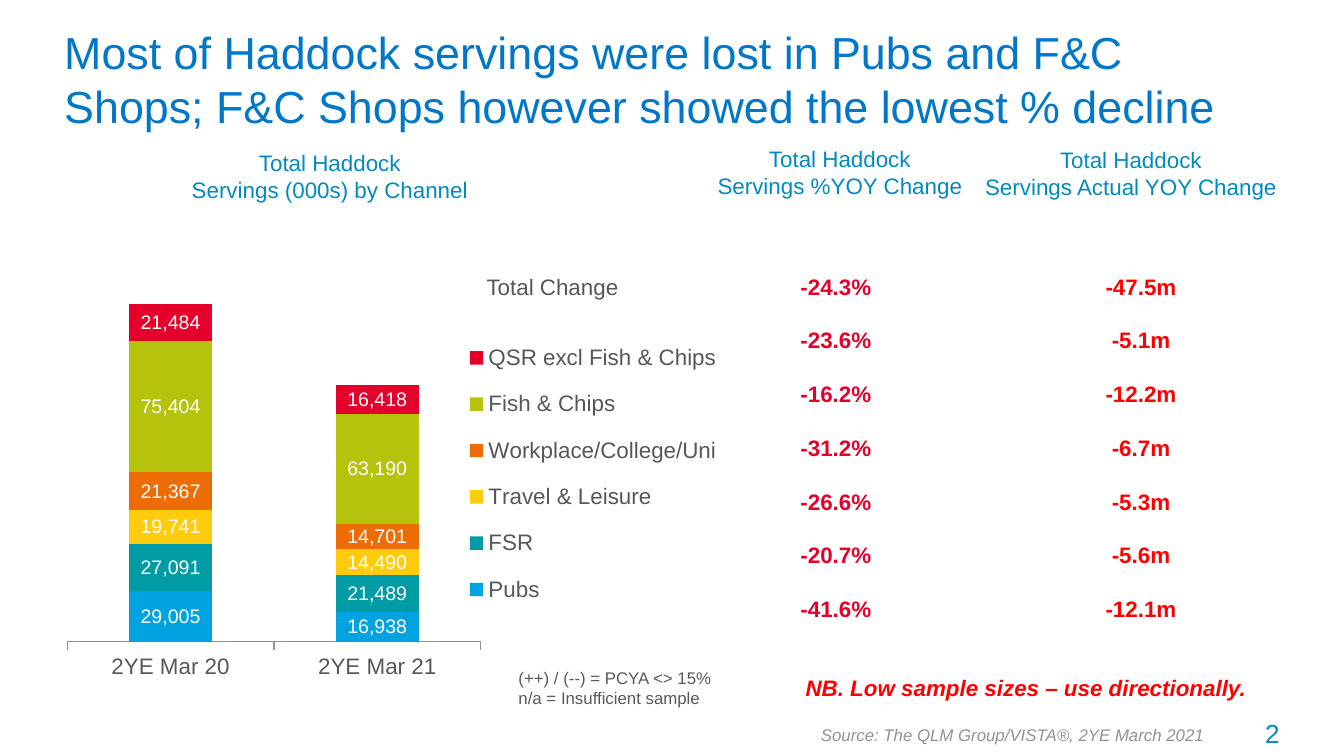
from lxml import etree
from pptx import Presentation
from pptx import util as u
from pptx.chart import data as cd
from pptx.dml.color import RGBColor
from pptx.enum import chart as ch, text as tx
from pptx.oxml.ns import qn

PX = 9144  # EMU in one px, 100 px to the inch
FONT = "Arial"
BLUE, GREY, RED, CRIMSON = "008AC0", "54585A", "FF0000", "E4002B"
ALIGN = {"l": tx.PP_ALIGN.LEFT, "c": tx.PP_ALIGN.CENTER, "r": tx.PP_ALIGN.RIGHT}

YEARS = ["2YE Mar 20", "2YE Mar 21"]
CHANNELS = [
    ("Pubs", (29005, 16938), "00A3E0"),
    ("FSR", (27091, 21489), "009CA6"),
    ("Travel & Leisure", (19741, 14490), "FECC0C"),
    ("Workplace/College/Uni", (21367, 14701), "ED6C05"),
    ("Fish & Chips", (75404, 63190), "B6C30C"),
    ("QSR excl Fish & Chips", (21484, 16418), CRIMSON),
]
PERCENTS = ["-24.3%", "-23.6%", "-16.2%", "-31.2%", "-26.6%", "-20.7%", "-41.6%"]
ACTUALS = ["-47.5m", "-5.1m", "-12.2m", "-6.7m", "-5.3m", "-5.6m", "-12.1m"]


def rgb(code):
    return RGBColor.from_string(code)


def px(*vals):
    return [u.Emu(v * PX) for v in vals]


def style(font, size, color):
    font.name, font.size = FONT, u.Pt(size)
    font.color.rgb = rgb(color)


def write(slide, lines, at, size=12, color=GREY, align="l", bold=False,
          italic=False, wrap=True, middle=False, inset=10, gap=0):
    """Add a text box with one paragraph per line, gap points apart."""
    frame = slide.shapes.add_textbox(*px(*at)).text_frame
    frame.word_wrap = wrap
    frame.margin_left = px(inset)[0]
    if middle:
        frame.vertical_anchor = tx.MSO_ANCHOR.MIDDLE
    for i, line in enumerate(lines):
        para = frame.add_paragraph() if i else frame.paragraphs[0]
        para.alignment = ALIGN[align]
        para.space_before = u.Pt(gap if i else 0)
        run = para.add_run()
        run.text = line
        style(run.font, size, color)
        run.font.bold, run.font.italic = bold, italic


def place(parent, index, box, inner=False):
    """Set a manual layout, in percent of the chart, on a chart part."""
    for old in parent.findall(qn("c:layout")):
        parent.remove(old)
    layout = etree.Element(qn("c:layout"))
    manual = etree.SubElement(layout, qn("c:manualLayout"))
    rules = [("layoutTarget", "inner")] if inner else []
    rules += [("xMode", "edge"), ("yMode", "edge")]
    rules += [(side, val / 100) for side, val in zip("xywh", box)]
    for tag, val in rules:
        etree.SubElement(manual, qn("c:" + tag), val=str(val))
    parent.insert(index, layout)


def draw_chart(slide, at):
    data = cd.CategoryChartData(number_format="#,##0")
    data.categories = YEARS
    for name, vals, _ in CHANNELS:
        data.add_series(name, vals)
    kind = ch.XL_CHART_TYPE.COLUMN_STACKED
    chart = slide.shapes.add_chart(kind, *px(*at), data).chart
    style(chart.font, 12, GREY)
    chart.has_title = False

    plot = chart.plots[0]
    plot.gap_width, plot.overlap = 150, 100
    plot.vary_by_categories = False
    for series, (_, _, color) in zip(plot.series, CHANNELS):
        series.format.fill.solid()
        series.format.fill.fore_color.rgb = rgb(color)
        labels = series.data_labels
        labels.show_value = True
        labels.number_format, labels.number_format_is_linked = "#,##0", False
        style(labels.font, 10.5, "FFFFFF")

    values = chart.value_axis
    values.visible = values.has_major_gridlines = False
    values.minimum_scale, values.maximum_scale = 0, 250000
    years = chart.category_axis
    years.major_tick_mark = ch.XL_TICK_MARK.OUTSIDE
    years.format.line.color.rgb = rgb("8E9396")

    chart.has_legend = True
    legend = chart.legend
    legend.position = ch.XL_LEGEND_POSITION.RIGHT
    legend.include_in_layout = False
    style(legend.font, 12, GREY)
    place(legend._element, 1, (56.8, 24.2, 37, 53.3))
    place(chart._chartSpace.chart.plotArea, 0, (1.9, 3.5, 57.7, 77.1), inner=True)


def main():
    deck = Presentation()
    deck.slide_width = px(1000)[0]
    deck.slide_height = deck.slide_width * 9 // 16
    slide = deck.slides.add_slide(deck.slide_layouts[6])

    draw_chart(slide, (40, 139, 533, 420))
    write(slide, ["Most of Haddock servings were lost in Pubs and F&C Shops; "
                  "F&C Shops however showed the lowest % decline"],
          (38, 23, 917, 71), size=24, color="0077C8", middle=True)

    for head, at in [("Servings (000s) by Channel", (132, 106, 227, 50)),
                     ("Servings %YOY Change", (523, 103, 204, 50)),
                     ("Servings Actual YOY Change", (722, 104, 239, 50))]:
        write(slide, ["Total Haddock", head], at, color=BLUE, align="c", wrap=False)

    write(slide, ["Total Change"], (338, 198, 185, 30), inset=24)
    for lines, left, height, color in [(PERCENTS, 543, 273, CRIMSON),
                                       (ACTUALS, 770, 293, RED)]:
        write(slide, lines, (left, 198, 158, height), color=color, align="c",
              bold=True, gap=14.4)

    write(slide, ["(++) / (--) = PCYA <> 15%", "n/a = Insufficient sample"],
          (376, 492, 166, 40), size=9, color="595959", wrap=False)
    write(slide, ["NB. Low sample sizes – use directionally."],
          (570, 497, 387, 30), color=RED, align="c", bold=True, italic=True)
    write(slide, ["Source: The QLM Group/VISTA®, 2YE March 2021"],
          (601, 534, 314, 25), size=9, color="8E9396", italic=True, wrap=False)
    write(slide, ["2"], (882, 529, 80, 34), size=14, color=BLUE, align="r")
    deck.save("out.pptx")


if __name__ == "__main__":
    main()
